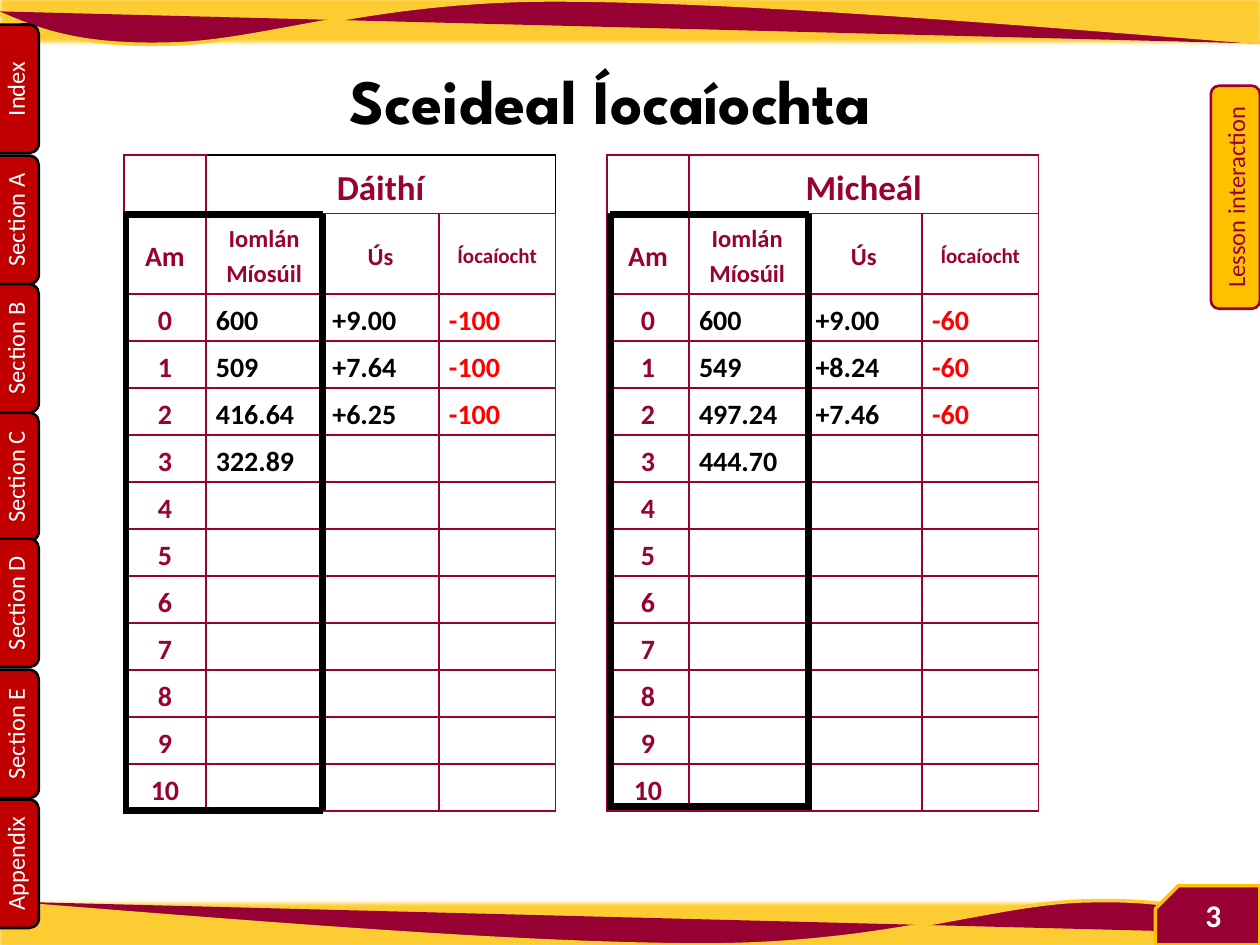
import pptx
import pptx.util
import pptx.dml.color
import pptx.enum.shapes
import pptx.enum.text
import pptx.oxml.ns
import lxml.etree

COLORS = {"wine": "990033", "wave": "970033", "band": "FDCC33", "gold": "FFC000",
          "tab": "C00000", "black": "000000", "white": "FFFFFF", "red": "FF0000"}
SHAPES = pptx.enum.shapes.MSO_SHAPE
ALIGN = pptx.enum.text.PP_ALIGN
ANCHOR = pptx.enum.text.MSO_ANCHOR
COLUMNS, ROWS = 100, 75


def rgb(name):
    return pptx.dml.color.RGBColor.from_string(COLORS[name])


def child(parent, tag, **attributes):
    return lxml.etree.SubElement(parent, pptx.oxml.ns.qn(tag), attributes)


def write(frame, text, size=16, color="wine", bold=False, align=ALIGN.CENTER,
          font="Calibri", spacing=None):
    para = frame.paragraphs[0]
    para.alignment = align
    para.line_spacing = spacing
    span = para.add_run()
    span.text = text
    span.font.name = font
    span.font.size = pptx.util.Pt(size)
    span.font.bold = bold
    span.font.color.rgb = rgb(color)


class Board:
    def __init__(self, deck):
        self.unit = deck.slide_width / COLUMNS
        self.page = deck.slides.add_slide(deck.slide_layouts[6])
        self.shapes = self.page.shapes

    def grid(self, *values):
        return [round(value * self.unit) for value in values]

    def paint(self, shape, fill, line=None, width=1):
        shape.shadow.inherit = False
        shape.fill.solid()
        shape.fill.fore_color.rgb = rgb(fill)
        if line:
            shape.line.color.rgb = rgb(line)
            shape.line.width = pptx.util.Pt(width)
        else:
            shape.line.fill.background()

    def box(self, kind, place, fill, line=None, width=1.5, turn=0, text="",
            anchor=ANCHOR.MIDDLE, **style):
        shape = self.shapes.add_shape(kind, *self.grid(*place))
        shape.rotation = turn
        self.paint(shape, fill, line, width)
        if text:
            shape.text_frame.word_wrap = True
            shape.text_frame.vertical_anchor = anchor
            write(shape.text_frame, text, **style)
        return shape

    def band(self, place, turn):
        shape = self.box(SHAPES.RECTANGLE, place, "band", turn=turn)
        effects = shape._element.spPr.find(pptx.oxml.ns.qn("a:effectLst"))
        child(effects, "a:softEdge", rad=str(pptx.util.Pt(2.5)))

    def label(self, place, text, **style):
        frame = self.shapes.add_textbox(*self.grid(*place)).text_frame
        frame.word_wrap = True
        write(frame, text, **style)

    def wave(self, knots):
        builder = self.shapes.build_freeform(*self.grid(*knots[0]), scale=1.0)
        builder.add_line_segments([self.grid(*knot) for knot in knots[1:]], close=False)
        shape = builder.convert_to_shape()
        segments = list(shape._element.iter(pptx.oxml.ns.qn("a:lnTo")))
        outline = segments[0].getparent()
        for start in range(0, len(segments), 3):
            curve = child(outline, "a:cubicBezTo")
            for segment in segments[start:start + 3]:
                curve.append(segment[0])
                outline.remove(segment)
        self.paint(shape, "wave", "band", 2)

    def line(self, *ends):
        rule = self.shapes.add_connector(pptx.enum.shapes.MSO_CONNECTOR.STRAIGHT,
                                         *self.grid(*ends))
        rule.line.color.rgb = rgb("black")
        rule.line.width = pptx.util.Pt(4)
        child(rule._element.spPr, "a:effectLst")

    def frame(self, left, right, post, bottom, top=17):
        self.line(right, top, right, 64.3)
        self.line(left, top, right, top)
        self.line(left, bottom, right, bottom)
        self.line(post, top, post, 64.3)

    def border(self, cell, **sides):
        properties = cell._tc.get_or_add_tcPr()
        for side in "LRTB":
            color = sides.get(side, "wine")
            edge = child(properties, "a:ln" + side, w=str(pptx.util.Pt(1)))
            if color:
                child(child(edge, "a:solidFill"), "a:srgbClr", val=COLORS[color])
            else:
                child(edge, "a:noFill")

    def table(self, place, widths, heights):
        table = self.shapes.add_table(len(heights), len(widths), *self.grid(*place)).table
        table.first_row = table.horz_banding = False
        for column, width in zip(table.columns, self.grid(*widths)):
            column.width = width
        for row, height in zip(table.rows, self.grid(*heights)):
            row.height = height
        for cell in table.iter_cells():
            cell.margin_left = cell.margin_right = pptx.util.Inches(0.08)
            cell.margin_top, cell.margin_bottom = pptx.util.Inches(0.01), 0
            cell.vertical_anchor = ANCHOR.MIDDLE
        return table

    def schedule(self, table, first, name, entries):
        def put(row, column, text, **style):
            write(table.cell(row, first + column).text_frame, text,
                  bold=True, spacing=1.15, **style)

        table.cell(0, first + 1).merge(table.cell(0, first + 3))
        put(0, 1, name, size=20)
        for column, (heading, size) in enumerate(HEADINGS):
            put(1, column, heading, size=size)
        for time in range(PERIODS):
            put(time + 2, 0, str(time))
        for row, entry in enumerate(entries, 2):
            for column, (text, color) in enumerate(zip(entry, ("black", "black", "red")), 1):
                put(row, column, text, color=color, align=ALIGN.LEFT)


PERIODS = 11
HEADINGS = [("Am", 16), ("Iomlán Míosúil", 14), ("Ús", 14), ("Íocaíocht", 12)]
PAYMENTS = {
    "Dáithí": [("600", "+9.00", "-100"), ("509", "+7.64", "-100"),
               ("416.64", "+6.25", "-100"), ("322.89",)],
    "Micheál": [("600", "+9.00", "-60"), ("549", "+8.24", "-60"),
                ("497.24", "+7.46", "-60"), ("444.70",)],
}
TABS = {"Section A": 15.1, "Section B": 25.3, "Section C": 35.5, "Section D": 45.5,
        "Section E": 55.9, "Appendix": 66.2, "Index": 4.7}
TOP_WAVE = [(101.5, 3.5), (80.1, 1.8), (58.6, 0), (43.9, 0), (29.2, 0), (20.8, 3.4),
            (13.4, 3.5), (6, 3.7), (2.8, 2.3), (-0.4, 0.9)]


def main():
    deck = pptx.Presentation()
    deck.slide_width, deck.slide_height = pptx.util.Inches(10), pptx.util.Inches(7.5)
    board = Board(deck)

    bottom_wave = [(COLUMNS - x - 0.2, ROWS - y) for x, y in TOP_WAVE]
    for top, turn, knots in ((-48.8, 90, TOP_WAVE), (23, 270, bottom_wave)):
        board.band((47.9, top, 4.2, 100.8), turn)
        board.wave(knots)

    for name, top in TABS.items():
        board.box(SHAPES.ROUNDED_RECTANGLE, (-4.36, top, 10.2, 4.7), "tab", "black",
                  turn=270, text=name, anchor=ANCHOR.BOTTOM, size=14, color="white")

    half = [6.5, 9.25, 9.25, 9.25]
    table = board.table((9.84, 12.3, 72.6, 52.1), half + [4.1] + half,
                        [4.65, 6.4] + [41.05 / PERIODS] * PERIODS)
    for first, (name, entries) in zip((0, 5), PAYMENTS.items()):
        board.schedule(table, first, name, entries)
    for row in range(len(table.rows)):
        for column in range(len(table.columns)):
            cell = table.cell(row, column)
            sides = {}
            if column == 4:
                sides = {"T": None, "B": None}
            if row == 0 and 1 <= column <= 3:
                sides = {"T": "black", "R": "black"}
            if row == 0 and column == 4:
                sides["L"] = "black"
            board.border(cell, **sides)
            cell.fill.background()

    board.box(SHAPES.ROUNDED_RECTANGLE, (89.2, 13.7, 17.7, 3.9), "gold", "wine",
              turn=270, text="Lesson interaction", size=14)
    badge = board.box(SHAPES.SNIP_ROUND_RECTANGLE, (91.7, 70.3, 8.3, 4.7), "wine", "gold",
                      width=2, text="3", size=18, color="white", bold=True)
    badge.adjustments[0], badge.adjustments[1] = 0, 0.39
    badge._element.spPr.xfrm.set("flipH", "1")
    board.label((16.15, 4.4, 64.6, 7.1), "Sceideal Íocaíochta", size=36, color="black",
                bold=True, font="League Spartan")
    board.frame(9.8, 25.6, 10, 64.3)
    board.frame(48.45, 64.2, 48.45, 64)
    deck.save("out.pptx")


if __name__ == "__main__":
    main()
